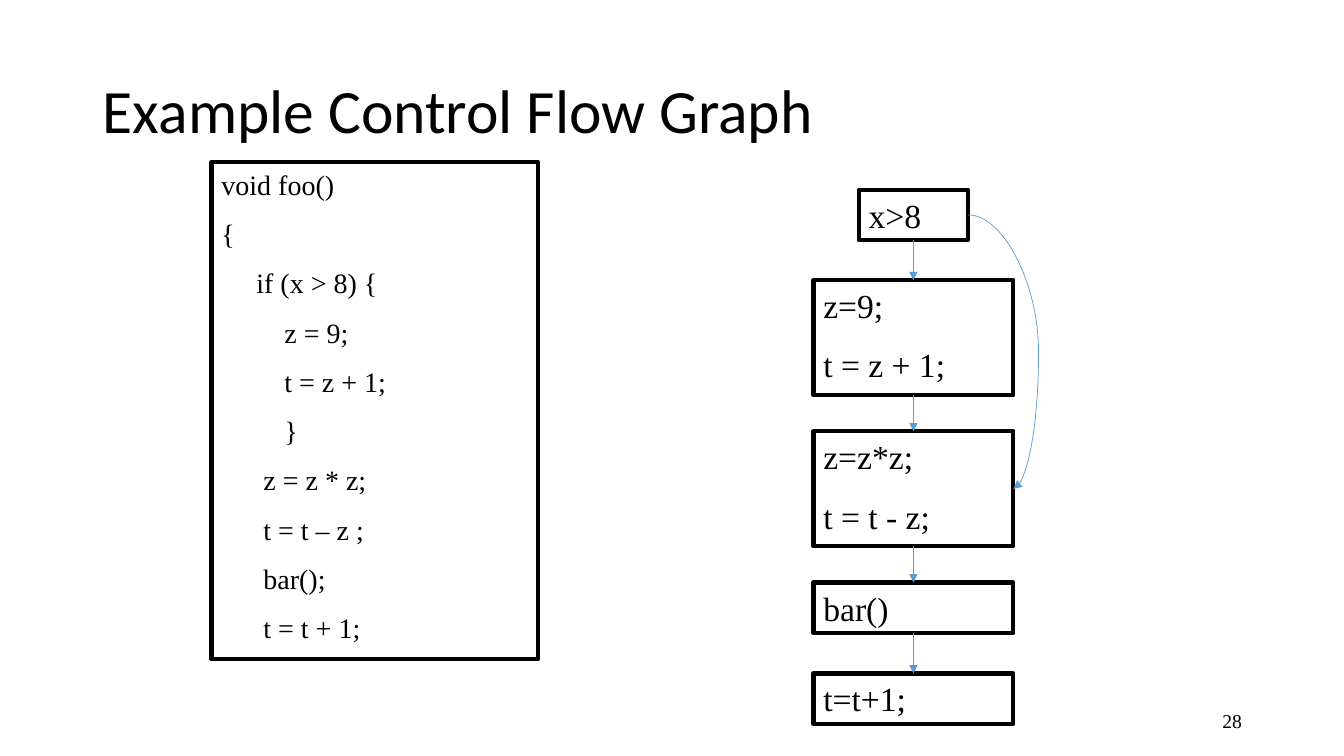
from lxml import etree
from pptx import Presentation
from pptx import util as u
from pptx.dml.color import RGBColor
from pptx.enum import shapes, text
from pptx.oxml import ns

SERIF = "Times New Roman"


def style_text(frame, font, size, align=text.PP_ALIGN.LEFT):
    frame.word_wrap = True
    for index, para in enumerate(frame.paragraphs):
        para.alignment = align
        para.space_before = u.Pt(size * 0.56 if index else 0)
        for span in para.runs:
            span.font.name = font
            span.font.size = u.Pt(size)
            span.font.color.rgb = RGBColor.from_string("000000")


def style_arrow(connector):
    connector.line.color.rgb = RGBColor.from_string("5B9BD5")
    connector.line.width = u.Pt(0.5)
    properties = connector._element.spPr
    outline = properties.find(ns.qn("a:ln"))
    etree.SubElement(outline, ns.qn("a:tailEnd"), type="triangle")
    etree.SubElement(properties, ns.qn("a:effectLst"))


deck = Presentation()
deck.slide_width = u.Cm(33.87)
deck.slide_height = u.Cm(19.05)
page = deck.slides.add_slide(deck.slide_layouts[5])

title = page.shapes.title
title.left, title.top = u.Cm(2.34), u.Cm(1.02)
title.width, title.height = u.Cm(29.21), u.Cm(3.68)
title.text_frame.text = "Example Control Flow Graph"
title.text_frame.vertical_anchor = text.MSO_ANCHOR.MIDDLE
title.text_frame.paragraphs[0].line_spacing = 0.9
style_text(title.text_frame, "Calibri", 44)

code = [
    ("void foo()", 0),
    ("{", 0),
    ("if (x > 8) {", 5),
    ("z = 9;", 9),
    ("t = z + 1;", 9),
    ("}", 9),
    ("z = z * z;", 6),
    ("t = t – z ;", 6),
    ("bar();", 6),
    ("t = t + 1;", 6),
]
center = 23.02
boxes = [
    (5.33, 4.09, 8.23, 12.52, 20, [line for line, indent in code]),
    (center - 1.38, 4.78, 2.76, 1.27, 24, ["x>8"]),
    (center - 2.52, 7.06, 5.04, 2.9, 24, ["z=9;", "t = z + 1;"]),
    (center - 2.52, 10.87, 5.04, 2.9, 24, ["z=z*z;", "t = t - z;"]),
    (center - 2.52, 14.68, 5.04, 1.27, 24, ["bar()"]),
    (center - 2.52, 16.97, 5.04, 1.27, 24, ["t=t+1;"]),
]
drawn = []
for left, top, width, height, size, lines in boxes:
    box = page.shapes.add_shape(
        shapes.MSO_SHAPE.RECTANGLE, u.Cm(left), u.Cm(top), u.Cm(width), u.Cm(height)
    )
    box.shadow.inherit = False
    box.fill.background()
    box.line.color.rgb = RGBColor.from_string("000000")
    box.line.width = u.Pt(3)
    box.text_frame.text = "\n".join(lines)
    box.text_frame.vertical_anchor = text.MSO_ANCHOR.TOP
    style_text(box.text_frame, SERIF, size)
    drawn.append(box)

listing, *blocks = drawn
for para, (line, indent) in zip(listing.text_frame.paragraphs, code):
    para._p.get_or_add_pPr().set("marL", str(u.Pt(5 * indent)))

number = page.shapes.add_textbox(u.Cm(23.93), u.Cm(17.65), u.Cm(7.62), u.Cm(1.02))
number.text_frame.text = "28"
number.text_frame.vertical_anchor = text.MSO_ANCHOR.MIDDLE
style_text(number.text_frame, SERIF, 14, text.PP_ALIGN.RIGHT)

for upper, lower in zip(blocks, blocks[1:]):
    arrow = page.shapes.add_connector(shapes.MSO_CONNECTOR.STRAIGHT, 0, 0, 0, 0)
    arrow.begin_connect(upper, 2)
    arrow.end_connect(lower, 0)
    style_arrow(arrow)

test, target = blocks[0], blocks[2]
branch = page.shapes.add_connector(
    shapes.MSO_CONNECTOR.CURVE,
    test.left + test.width,
    test.top + test.height // 2,
    target.left + target.width,
    target.top + target.height // 2,
)
style_arrow(branch)
geometry = branch._element.spPr.find(ns.qn("a:prstGeom"))
adjustments = geometry.find(ns.qn("a:avLst"))
etree.SubElement(adjustments, ns.qn("a:gd"), name="adj1", fmla="val 155600")

deck.save("out.pptx")
